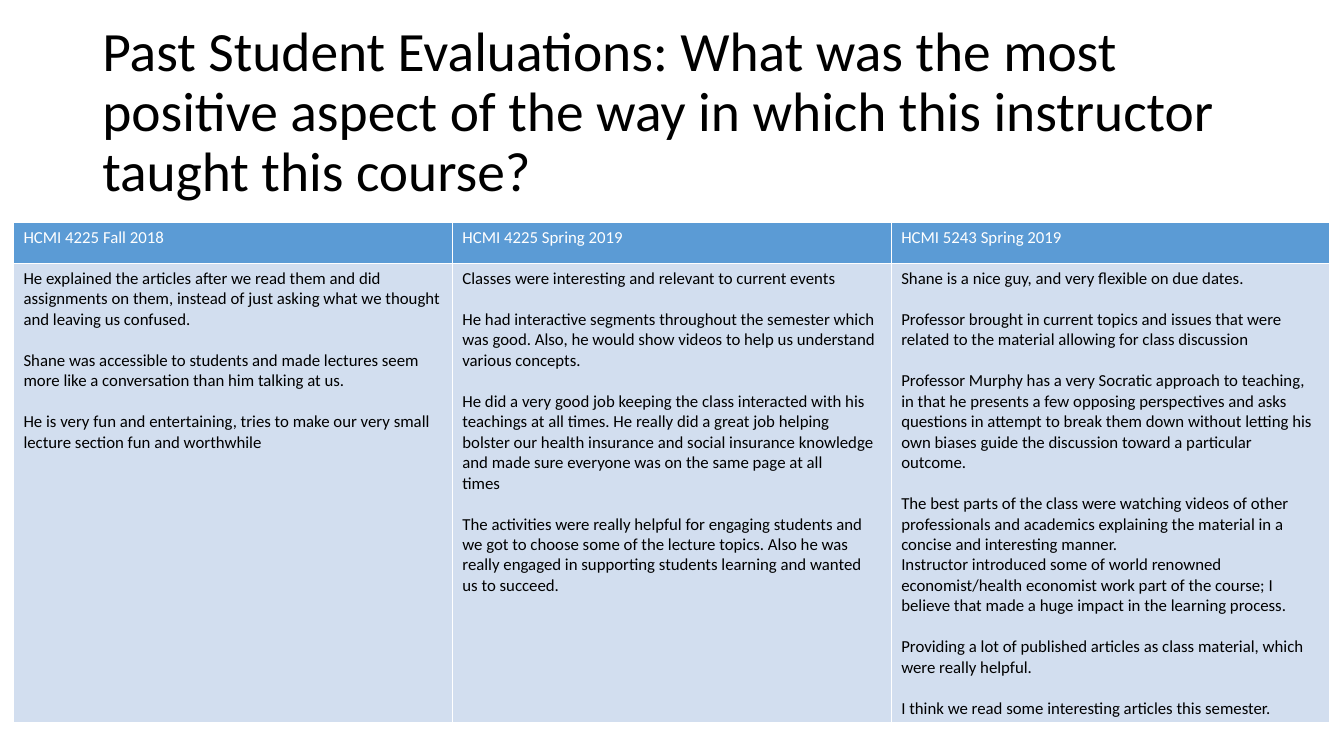
from dataclasses import dataclass

from lxml import etree
from pptx import Presentation
from pptx.dml.color import RGBColor
from pptx.enum.text import MSO_ANCHOR
from pptx.oxml.ns import qn
from pptx.util import Pt

MIDDLE = MSO_ANCHOR.MIDDLE


@dataclass(frozen=True)
class Theme:
    """Colours, font and type sizes of the slide."""
    font: str = "Calibri"
    ink: str = "000000"
    white: str = "FFFFFF"
    header_fill: str = "5B9BD5"
    body_fill: str = "D2DEEF"
    title_size: float = 39.6
    table_size: float = 12
    comment_gap: float = 14.65
    border: float = 1


THEME = Theme()
TITLE = ("Past Student Evaluations: What was the most positive aspect of the way "
         "in which this instructor taught this course?")
COURSES = {
    "HCMI 4225 Fall 2018": [
        ["He explained the articles after we read them and did assignments on them, "
         "instead of just asking what we thought and leaving us confused."],
        ["Shane was accessible to students and made lectures seem more like a "
         "conversation than him talking at us."],
        ["He is very fun and entertaining, tries to make our very small lecture "
         "section fun and worthwhile"],
    ],
    "HCMI 4225 Spring 2019": [
        ["Classes were interesting and relevant to current events"],
        ["He had interactive segments throughout the semester which was good. Also, "
         "he would show videos to help us understand various concepts."],
        ["He did a very good job keeping the class interacted with his teachings at "
         "all times. He really did a great job helping",
         "bolster our health insurance and social insurance knowledge and made sure "
         "everyone was on the same page at all",
         "times"],
        ["The activities were really helpful for engaging students and we got to "
         "choose some of the lecture topics. Also he was",
         "really engaged in supporting students learning and wanted us to succeed."],
    ],
    "HCMI 5243 Spring 2019": [
        ["Shane is a nice guy, and very flexible on due dates."],
        ["Professor brought in current topics and issues that were related to the "
         "material allowing for class discussion"],
        ["Professor Murphy has a very Socratic approach to teaching, in that he "
         "presents a few opposing perspectives and asks questions in attempt to break "
         "them down without letting his own biases guide the discussion toward a "
         "particular outcome."],
        ["The best parts of the class were watching videos of other professionals and "
         "academics explaining the material in a concise and interesting manner.",
         "Instructor introduced some of world renowned economist/health economist work "
         "part of the course; I believe that made a huge impact in the learning process."],
        ["Providing a lot of published articles as class material, which were really "
         "helpful."],
        ["I think we read some interesting articles this semester."],
    ],
}


def add_span(para, text, size, color):
    """Add one formatted run to a paragraph."""
    span = para.add_run()
    span.text = text
    for name, value in {"name": THEME.font, "size": Pt(size), "bold": False}.items():
        setattr(span.font, name, value)
    span.font.color.rgb = RGBColor.from_string(color)


def add_title(page, box):
    """Place the question as the slide heading in the box."""
    frame = page.shapes.add_textbox(*map(Pt, box)).text_frame
    for name, value in {"word_wrap": True, "vertical_anchor": MIDDLE}.items():
        setattr(frame, name, value)
    para = frame.paragraphs[0]
    para.line_spacing = 0.9
    add_span(para, TITLE, THEME.title_size, THEME.ink)


def style_cell(cell, fill):
    """Give a cell its border lines and fill."""
    properties = cell._tc.get_or_add_tcPr()
    for side in ("a:lnL", "a:lnR", "a:lnT", "a:lnB"):
        line = etree.SubElement(properties, qn(side), w=str(Pt(THEME.border)))
        solid = etree.SubElement(line, qn("a:solidFill"))
        etree.SubElement(solid, qn("a:srgbClr"), val=THEME.white)
    cell.fill.solid()
    cell.fill.fore_color.rgb = RGBColor.from_string(fill)


def fill_cell(cell, comments, fill, color):
    """Write comments into a cell, with a gap between one comment and the next."""
    style_cell(cell, fill)
    frame = cell.text_frame
    for number, comment in enumerate(comments):
        for part, text in enumerate(comment):
            first = number == 0 and part == 0
            para = frame.paragraphs[0] if first else frame.add_paragraph()
            if number and part == 0:
                para.space_before = Pt(THEME.comment_gap)
            add_span(para, text, THEME.table_size, color)


def add_evaluations(page, box, header_height):
    """Place the table of comments, one column per course, in the box."""
    left, top, width, height = box
    table = page.shapes.add_table(2, len(COURSES), *map(Pt, box)).table
    for name in ("first_row", "horz_banding"):
        setattr(table, name, False)
    for row, row_height in zip(table.rows, (header_height, height - header_height)):
        row.height = Pt(row_height)
    for index, (course, comments) in enumerate(COURSES.items()):
        table.columns[index].width = Pt(width / len(COURSES))
        fill_cell(table.cell(0, index), [[course]], THEME.header_fill, THEME.white)
        fill_cell(table.cell(1, index), comments, THEME.body_fill, THEME.ink)


def main():
    """Build the deck and save it."""
    deck = Presentation()
    deck.slide_width, deck.slide_height = Pt(960), Pt(540)
    page = deck.slides.add_slide(deck.slide_layouts[6])
    add_title(page, (66, 28.75, 828, 104.4))
    add_evaluations(page, (9.6, 158.8, 940.5, 357.7), 29.2)
    deck.save("out.pptx")


if __name__ == "__main__":
    main()
